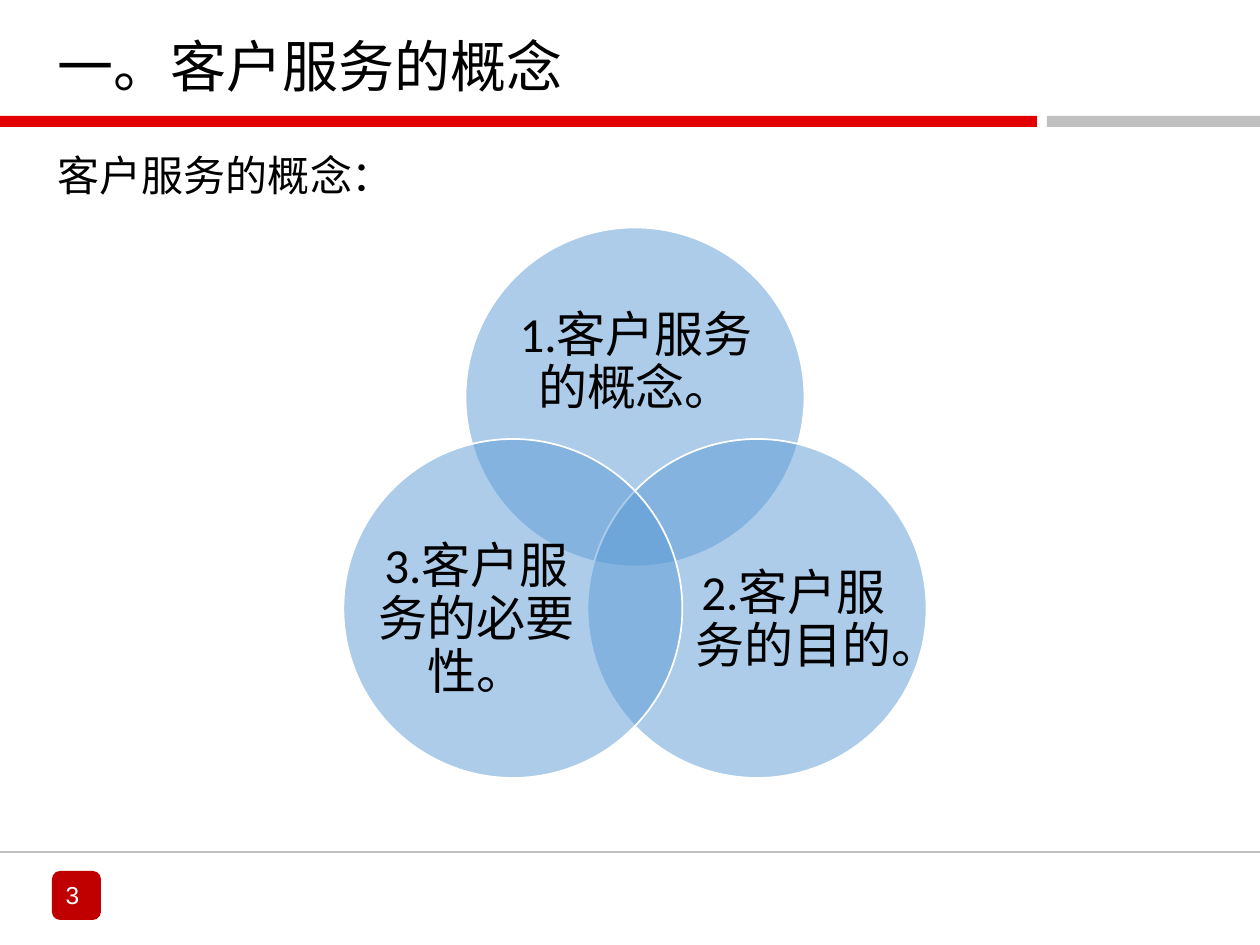
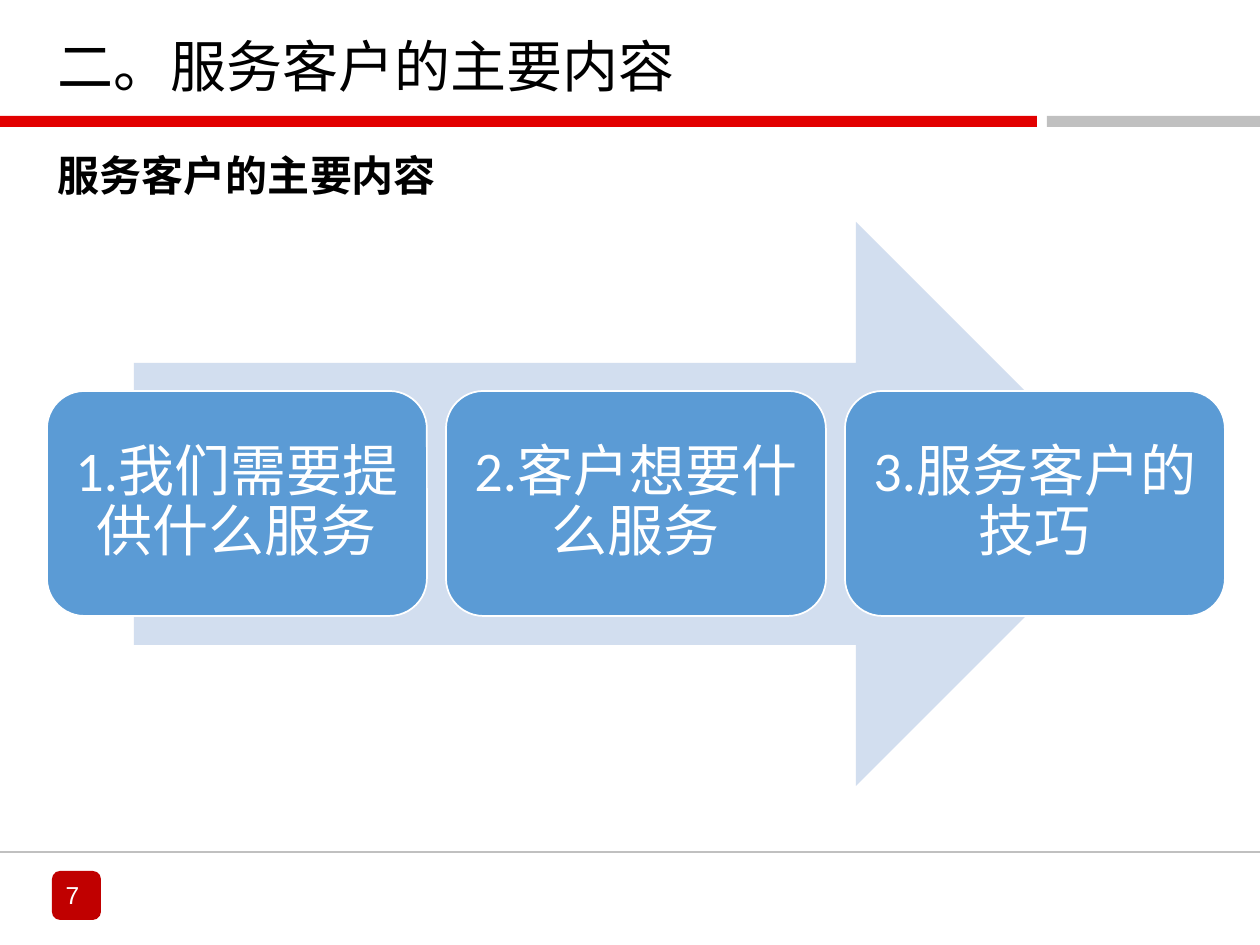
"""Build two customer service slides: a Venn diagram and an arrow process."""
import math
from dataclasses import dataclass

from lxml import etree
from pptx import Presentation
from pptx import util as u
from pptx.dml.color import RGBColor
from pptx.enum import shapes, text
from pptx.oxml.ns import qn

VENN = {
    "page": "3",
    "title": "一。客户服务的概念",
    "subtitle": "客户服务的概念：",
    "subtitle_bold": False,
    "topics": [
        ("1.客户服务的概念。", (512, 287, 248, 152)),
        ("2.客户服务的目的。", (692, 528, 203, 186)),
        ("3.客户服务的必要性。", (375, 528, 203, 186)),
    ],
}
PROCESS = {
    "page": "7",
    "title": "二。服务客户的主要内容",
    "subtitle": "服务客户的主要内容",
    "subtitle_bold": True,
    "steps": ["1.我们需要提供什么服务", "2.客户想要什么服务", "3.服务客户的技巧"],
}


@dataclass(frozen=True)
class Theme:
    black: str = "000000"
    white: str = "FFFFFF"
    red: str = "E20000"
    badge: str = "C00000"
    grey: str = "C0C0C0"
    blue: str = "5B9BD5"
    pale: str = "D2DEEF"
    heading_font: str = "Times New Roman"
    diagram_font: str = "Calibri"
    page_font: str = "Arial"
    asian_font: str = "Noto Sans CJK SC"
    title_size: int = 32
    subtitle_size: int = 24
    topic_size: int = 28
    step_size: int = 32
    page_size: int = 14


THEME = Theme()
WIDTH, HEIGHT = 1260, 945
BANDS = [((0, 116, 1037, 11), THEME.red), ((1047, 116, 213, 11), THEME.grey)]
FOOTER_Y = 852
BADGE = (52, 871, 49, 49)
PAGE_BOX = (28, 868, 89, 47)
TITLE_BOX = (45, 15, 1040, 91)
SUBTITLE_BOX = (45, 149, 945, 73)
VENN_CENTER, VENN_ORBIT, CIRCLE = (635, 538), 141, 339
ARROW = (134, 222, 1004, 564)
STEP_LEFT, STEP_TOP, STEP_WIDTH, STEP_HEIGHT, STEP_PITCH = 47, 391, 380, 225, 399


def px(count):
    return u.Emu(round(count * u.Inches(10) / WIDTH))


def place(part, box):
    part.left, part.top, part.width, part.height = map(px, box)


def write(part, words, font, size, color, bold=False, align=text.PP_ALIGN.CENTER,
          anchor=text.MSO_ANCHOR.MIDDLE, insets=(0, 0, 0, 0), spacing=0.9):
    frame = part.text_frame
    frame.text = words
    frame.word_wrap = True
    frame.auto_size = text.MSO_AUTO_SIZE.NONE
    frame.vertical_anchor = anchor
    (frame.margin_left, frame.margin_top,
     frame.margin_right, frame.margin_bottom) = map(px, insets)
    paragraph = frame.paragraphs[0]
    paragraph.alignment = align
    paragraph.line_spacing = spacing
    paragraph.space_before = u.Pt(0)
    run = paragraph.runs[0]
    run.font.name, run.font.size, run.font.bold = font, u.Pt(size), bold
    run.font.color.rgb = RGBColor.from_string(color)
    latin = run.font._element.find(qn("a:latin"))
    asian = etree.Element(qn("a:ea"), typeface=THEME.asian_font)
    latin.addnext(asian)


def add_block(slide, kind, box, fill, outline=None):
    block = slide.shapes.add_shape(kind, *map(px, box))
    block.shadow.inherit = False
    block.fill.solid()
    block.fill.fore_color.rgb = RGBColor.from_string(fill)
    if outline:
        block.line.color.rgb = RGBColor.from_string(outline)
        block.line.width = u.Pt(1)
    else:
        block.line.fill.background()
    return block


def add_label(slide, box, words, **style):
    write(slide.shapes.add_textbox(*map(px, box)), words, **style)


def add_base(deck, content):
    slide = deck.slides.add_slide(deck.slide_layouts[0])
    add_block(slide, shapes.MSO_SHAPE.ROUNDED_RECTANGLE, BADGE, THEME.badge)
    for box, color in BANDS:
        add_block(slide, shapes.MSO_SHAPE.RECTANGLE, box, color)
    rule = slide.shapes.add_connector(
        shapes.MSO_CONNECTOR.STRAIGHT, *map(px, (0, FOOTER_Y, WIDTH, FOOTER_Y)))
    rule.line.color.rgb = RGBColor.from_string(THEME.grey)
    rule.line.width = u.Pt(1)
    etree.SubElement(rule._element.spPr, qn("a:effectLst"))
    add_label(slide, PAGE_BOX, content["page"], font=THEME.page_font,
              size=THEME.page_size, color=THEME.white, spacing=1.0,
              anchor=text.MSO_ANCHOR.TOP, insets=(0, 12, 0, 0))

    heading = dict(font=THEME.heading_font, color=THEME.black,
                   align=text.PP_ALIGN.LEFT, insets=(13, 6, 13, 6))
    title, subtitle = slide.shapes.title, slide.placeholders[1]
    place(title, TITLE_BOX)
    write(title, content["title"], size=THEME.title_size,
          anchor=text.MSO_ANCHOR.BOTTOM, **heading)
    place(subtitle, SUBTITLE_BOX)
    write(subtitle, content["subtitle"], size=THEME.subtitle_size,
          bold=content["subtitle_bold"], anchor=text.MSO_ANCHOR.TOP, **heading)
    return slide


def add_venn(slide, topics):
    center_x, center_y = VENN_CENTER
    for index, (topic, label_box) in enumerate(topics):
        angle = math.tau * index / len(topics)
        left = center_x + VENN_ORBIT * math.sin(angle) - CIRCLE / 2
        top = center_y - VENN_ORBIT * math.cos(angle) - CIRCLE / 2
        circle = add_block(slide, shapes.MSO_SHAPE.OVAL,
                           (left, top, CIRCLE, CIRCLE), THEME.blue, THEME.white)
        tint = circle._element.spPr.find(qn("a:solidFill"))[0]
        etree.SubElement(tint, qn("a:alpha"), val="50000")
        add_label(slide, label_box, topic, font=THEME.diagram_font,
                  size=THEME.topic_size, color=THEME.black)


def add_process(slide, steps):
    add_block(slide, shapes.MSO_SHAPE.RIGHT_ARROW, ARROW, THEME.pale)
    for index, step in enumerate(steps):
        box = (STEP_LEFT + index * STEP_PITCH, STEP_TOP, STEP_WIDTH, STEP_HEIGHT)
        card = add_block(slide, shapes.MSO_SHAPE.ROUNDED_RECTANGLE, box,
                         THEME.blue, THEME.white)
        write(card, step, THEME.diagram_font, THEME.step_size, THEME.white,
              insets=(16, 16, 16, 16))


def main():
    deck = Presentation()
    deck.slide_width, deck.slide_height = px(WIDTH), px(HEIGHT)
    add_venn(add_base(deck, VENN), VENN["topics"])
    add_process(add_base(deck, PROCESS), PROCESS["steps"])
    deck.save("out.pptx")


if __name__ == "__main__":
    main()
